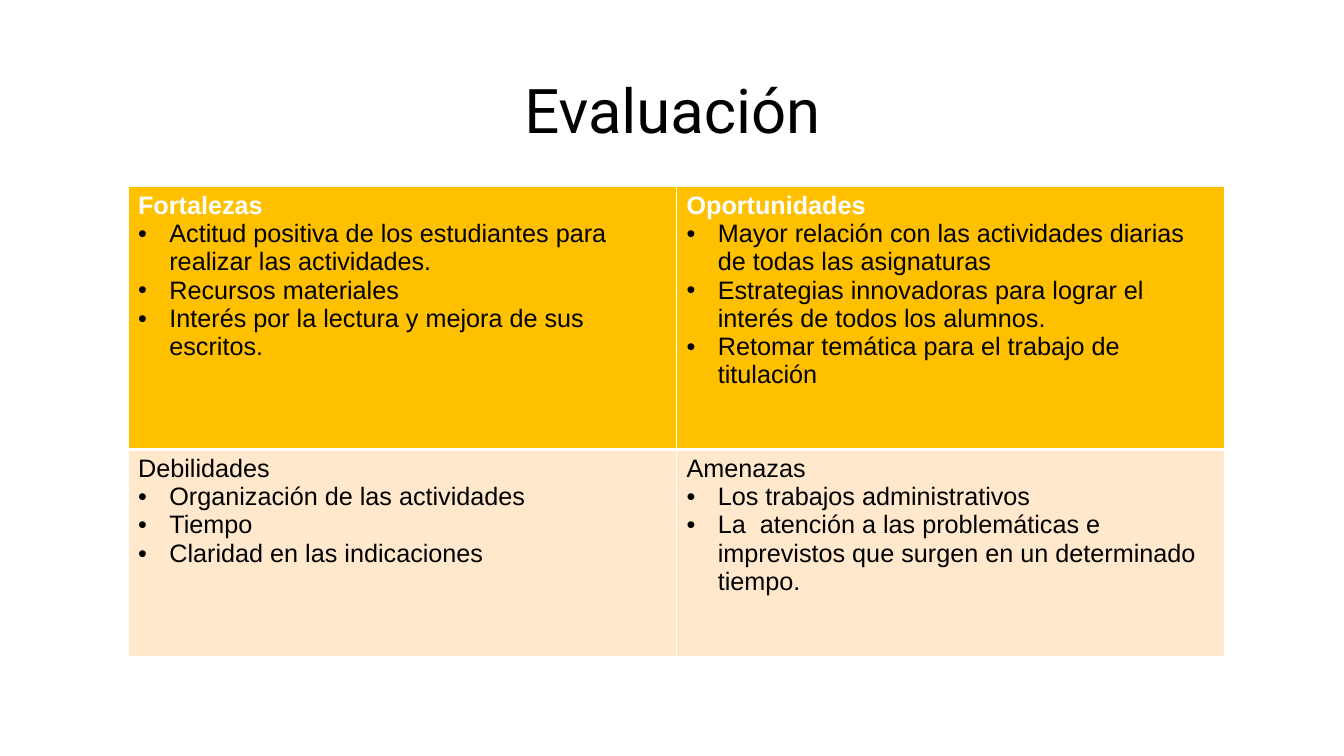
from dataclasses import dataclass

from lxml import etree
from pptx import Presentation
from pptx.dml.color import RGBColor
from pptx.enum.text import MSO_ANCHOR, PP_ALIGN
from pptx.oxml.ns import qn
from pptx.slide import Slide
from pptx.table import _Cell
from pptx.text.text import _Paragraph
from pptx.util import Inches, Pt

CENTER, MIDDLE = PP_ALIGN.CENTER, MSO_ANCHOR.MIDDLE
TITLE_ONLY = 5
SLIDE_WIDTH, SLIDE_HEIGHT = Inches(13.33), Inches(7.5)


@dataclass(frozen=True)
class Theme:
    title_font: str = "Roboto"
    body_font: str = "Arial"
    title_size: int = 44
    body_size: int = 18
    text: str = "000000"
    white: str = "FFFFFF"
    strong_fill: str = "FFC000"
    soft_fill: str = "FFE8CC"
    thin_line: int = 1
    thick_line: int = 3


@dataclass(frozen=True)
class Grid:
    left: float = 1.27
    top: float = 1.85
    column_width: float = 5.44
    row_heights: tuple[float, ...] = (2.61, 2.05)
    bullet_indent: float = 0.31


@dataclass(frozen=True)
class Quadrant:
    heading: str
    points: tuple[str, ...]


THEME = Theme()
GRID = Grid()
QUADRANTS = (
    (
        Quadrant("Fortalezas", (
            "Actitud positiva de los estudiantes para realizar las actividades.",
            "Recursos materiales",
            "Interés por la lectura y mejora de sus escritos.",
        )),
        Quadrant("Oportunidades", (
            "Mayor relación con las actividades diarias de todas las asignaturas",
            "Estrategias innovadoras para lograr el interés de todos los alumnos.",
            "Retomar temática para el trabajo de titulación",
        )),
    ),
    (
        Quadrant("Debilidades", (
            "Organización de las actividades",
            "Tiempo",
            "Claridad en las indicaciones",
        )),
        Quadrant("Amenazas", (
            "Los trabajos administrativos",
            "La  atención a las problemáticas e imprevistos que surgen en un determinado tiempo.",
        )),
    ),
)


def write_text(paragraph: _Paragraph, text: str, font_name: str, size: int,
               color: str, bold: bool = False) -> None:
    run = paragraph.add_run()
    run.text = text
    for name, value in {"name": font_name, "size": Pt(size), "bold": bold}.items():
        setattr(run.font, name, value)
    run.font.color.rgb = RGBColor.from_string(color)


def add_bullet(paragraph: _Paragraph) -> None:
    properties = paragraph._p.get_or_add_pPr()
    indent = Inches(GRID.bullet_indent)
    properties.set("marL", str(indent))
    properties.set("indent", str(-indent))
    etree.SubElement(properties, qn("a:buFont"), typeface=THEME.body_font)
    etree.SubElement(properties, qn("a:buChar"), char="•")


def set_borders(cell: _Cell, widths: dict[str, int]) -> None:
    properties = cell._tc.get_or_add_tcPr()
    for position, (side, width) in enumerate(widths.items()):
        line = etree.Element(qn(f"a:ln{side}"), w=str(Pt(width)))
        fill = etree.SubElement(line, qn("a:solidFill"))
        etree.SubElement(fill, qn("a:srgbClr"), val=THEME.white)
        properties.insert(position, line)


def fill_cell(cell: _Cell, quadrant: Quadrant, is_header: bool) -> None:
    cell.fill.solid()
    cell.fill.fore_color.rgb = RGBColor.from_string(
        THEME.strong_fill if is_header else THEME.soft_fill)
    thin, thick = THEME.thin_line, THEME.thick_line
    set_borders(cell, {
        "L": thin,
        "R": thin,
        "T": thin if is_header else thick,
        "B": thick if is_header else thin,
    })
    frame = cell.text_frame
    write_text(frame.paragraphs[0], quadrant.heading, THEME.body_font, THEME.body_size,
               THEME.white if is_header else THEME.text, is_header)
    for point in quadrant.points:
        paragraph = frame.add_paragraph()
        add_bullet(paragraph)
        write_text(paragraph, point, THEME.body_font, THEME.body_size, THEME.text)


def add_title(slide: Slide, text: str) -> None:
    title = slide.shapes.title
    place = {"left": 0.92, "top": 0.4, "width": 11.5, "height": 1.45}
    for name, value in place.items():
        setattr(title, name, Inches(value))
    title.text_frame.vertical_anchor = MIDDLE
    paragraph = title.text_frame.paragraphs[0]
    for name, value in {"alignment": CENTER, "line_spacing": 0.9}.items():
        setattr(paragraph, name, value)
    write_text(paragraph, text, THEME.title_font, THEME.title_size, THEME.text)


def add_quadrants(slide: Slide) -> None:
    row_count, column_count = len(QUADRANTS), len(QUADRANTS[0])
    table = slide.shapes.add_table(
        row_count, column_count, Inches(GRID.left), Inches(GRID.top),
        Inches(GRID.column_width * column_count), Inches(sum(GRID.row_heights))).table
    for column in table.columns:
        column.width = Inches(GRID.column_width)
    for row_index, (height, quadrants) in enumerate(zip(GRID.row_heights, QUADRANTS)):
        table.rows[row_index].height = Inches(height)
        for column_index, quadrant in enumerate(quadrants):
            fill_cell(table.cell(row_index, column_index), quadrant, row_index == 0)


def main() -> None:
    presentation = Presentation()
    presentation.slide_width, presentation.slide_height = SLIDE_WIDTH, SLIDE_HEIGHT
    slide = presentation.slides.add_slide(presentation.slide_layouts[TITLE_ONLY])

    # Heading
    add_title(slide, "Evaluación")

    # Four-part evaluation table
    add_quadrants(slide)

    presentation.save("out.pptx")


if __name__ == "__main__":
    main()
